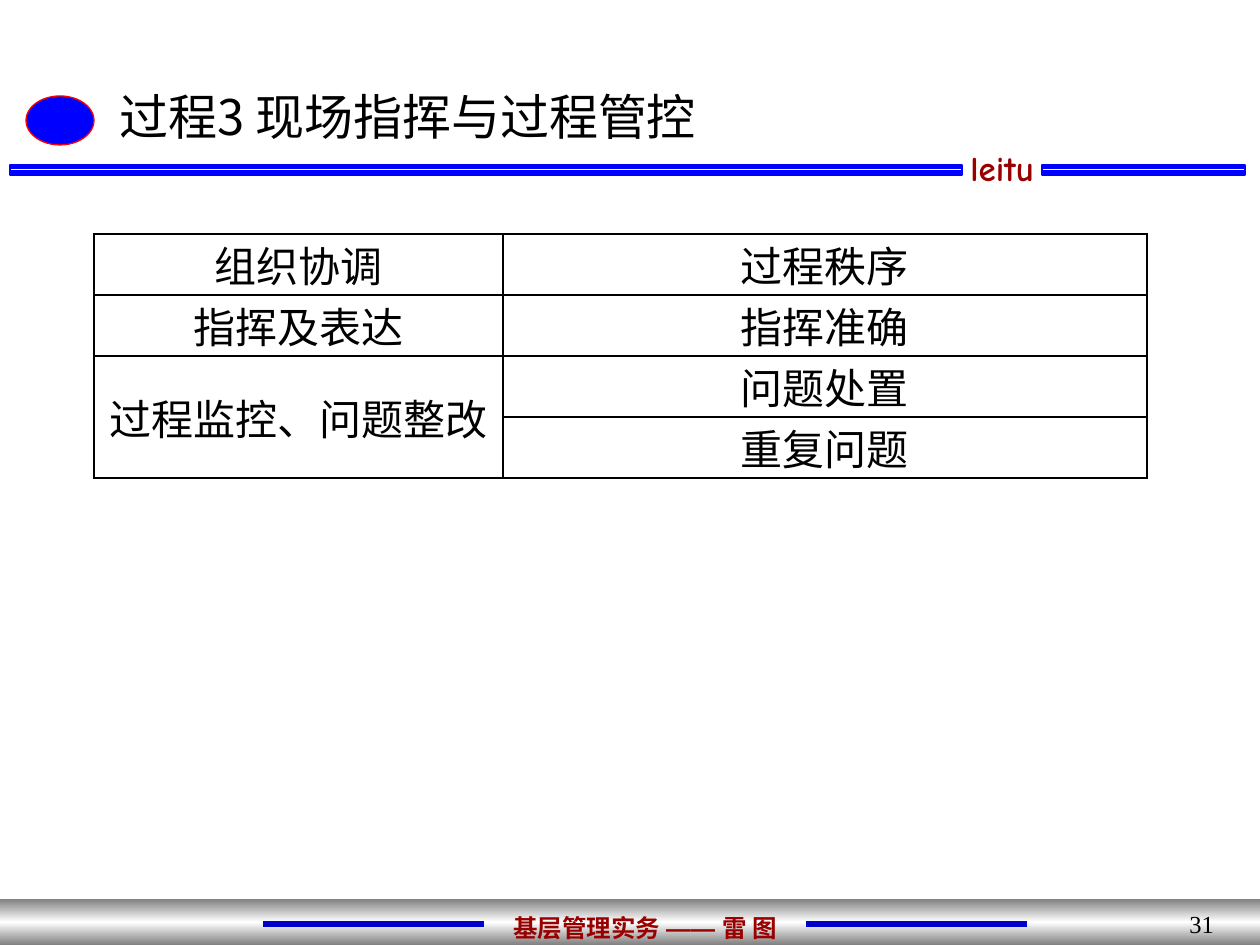
from copy import deepcopy

from lxml import etree
from pptx import Presentation
from pptx.dml.color import RGBColor
from pptx.enum.dml import MSO_PATTERN
from pptx.enum.shapes import MSO_CONNECTOR, MSO_SHAPE
from pptx.enum.text import MSO_ANCHOR, PP_ALIGN
from pptx.oxml.ns import qn
from pptx.util import Pt

RECT, OVAL = MSO_SHAPE.RECTANGLE, MSO_SHAPE.OVAL
STRAIGHT = MSO_CONNECTOR.STRAIGHT
STRIPES = MSO_PATTERN.DARK_HORIZONTAL
LEFT, CENTER, RIGHT = PP_ALIGN.LEFT, PP_ALIGN.CENTER, PP_ALIGN.RIGHT
MIDDLE = MSO_ANCHOR.MIDDLE

PX = 914400 / 126
CJK = "Noto Sans CJK SC"
HEX = {"blue": "0000FF", "rule": "0000CC", "red": "FF0000", "maroon": "990000",
       "gray": "808080", "white": "FFFFFF", "black": "000000"}
COLORS = {name: RGBColor.from_string(value) for name, value in HEX.items()}


def emu(*lengths):
    return [round(n * PX) for n in lengths]


def write(tf, runs, size, color="black", align=LEFT, bold=False):
    """Fill the first paragraph with (text, font name) runs."""
    p = tf.paragraphs[0]
    p.alignment = align
    for text, face in runs:
        r = p.add_run()
        r.text = text
        for key, value in {"name": face, "size": Pt(size), "bold": bold}.items():
            setattr(r.font, key, value)
        r.font.color.rgb = COLORS[color]
        etree.SubElement(r._r.get_or_add_rPr(), qn("a:ea"), typeface=face)


prs = Presentation()
prs.slide_width, prs.slide_height = emu(1260, 945)
s = prs.slides.add_slide(prs.slide_layouts[5])

# Footer band, gray to white to gray
band = s.shapes.add_shape(RECT, *emu(0, 899, 1260, 46))
band.shadow.inherit = False
band.line.fill.background()
band.fill.gradient()
band.fill.gradient_angle = 90
stop_list = band.fill._fill._gradFill.gsLst
stop_list.append(deepcopy(stop_list[0]))
for stop, (position, name) in zip(band.fill.gradient_stops,
                                  [(0, "gray"), (0.5, "white"), (1, "gray")]):
    stop.position = position
    stop.color.rgb = COLORS[name]

# Footer rules
for x in (263, 806):
    rule = s.shapes.add_connector(STRAIGHT, *emu(x, 924, x + 221, 924))
    rule.line.color.rgb = COLORS["rule"]
    rule.line.width = Pt(3)
    etree.SubElement(rule._element.spPr, qn("a:effectLst"))

# Striped bars under the title
for x, width in ((10, 952), (1042, 203)):
    bar = s.shapes.add_shape(RECT, *emu(x, 165, width, 10))
    bar.shadow.inherit = False
    bar.fill.patterned()
    bar.fill.pattern = STRIPES
    bar.fill.fore_color.rgb = COLORS["blue"]
    bar.fill.back_color.rgb = COLORS["white"]
    bar.line.color.rgb = COLORS["blue"]
    bar.line.width = Pt(0.75)

# Plain emblem beside the title
emblem = s.shapes.add_shape(OVAL, *emu(26, 96, 68, 49))
emblem.shadow.inherit = False
emblem.fill.solid()
emblem.fill.fore_color.rgb = COLORS["blue"]
emblem.line.color.rgb = COLORS["red"]
emblem.line.width = Pt(0.75)

# Page number, footer name and name between the bars
labels = [
    ((977, 903, 262, 63), [("31", "Times New Roman")], 14, "black", RIGHT, False),
    ((471, 907, 348, 42),
     [("基层管理实务 ", CJK), ("—— ", "Arial"), ("雷 图", CJK)],
     14, "maroon", CENTER, True),
    ((958, 140, 128, 54), [("leitu", "Comic Neue")], 20, "maroon", LEFT, True),
]
for box, runs, size, color, align, bold in labels:
    tf = s.shapes.add_textbox(*emu(*box)).text_frame
    tf.word_wrap = True
    if align == RIGHT:
        tf.margin_right = emu(25)[0]
    write(tf, runs, size, color, align, bold)

# Title
title = s.shapes.title
title.left, title.top, title.width, title.height = emu(107, 76, 1138, 79)
title.text_frame.vertical_anchor = MIDDLE
write(title.text_frame, [("过程3 现场指挥与过程管控", CJK)], 28)

# Table
rows = [("组织协调", "过程秩序"),
        ("指挥及表达", "指挥准确"),
        ("过程监控、问题整改", "问题处置"),
        ("", "重复问题")]
col_widths = emu(409, 644)
row_height = emu(61)[0]
table = s.shapes.add_table(len(rows), 2, *emu(94, 234, 1053, 244)).table
table.first_row = table.horz_banding = False
for column, width in zip(table.columns, col_widths):
    column.width = width
for i, texts in enumerate(rows):
    table.rows[i].height = row_height
    for j, text in enumerate(texts):
        cell = table.cell(i, j)
        cell.vertical_anchor = MIDDLE
        cell.margin_left = cell.margin_right = emu(6)[0]
        cell.margin_top = cell.margin_bottom = 0
        tcPr = cell._tc.get_or_add_tcPr()
        for side in ("lnL", "lnR", "lnT", "lnB"):
            ln = etree.SubElement(tcPr, qn(f"a:{side}"), w=str(Pt(1)))
            fill = etree.SubElement(ln, qn("a:solidFill"))
            etree.SubElement(fill, qn("a:srgbClr"), val=HEX["black"])
        cell.fill.background()
        if text:
            write(cell.text_frame, [(text, CJK)], 24, align=CENTER)
table.cell(2, 0).merge(table.cell(3, 0))

prs.save("out.pptx")
